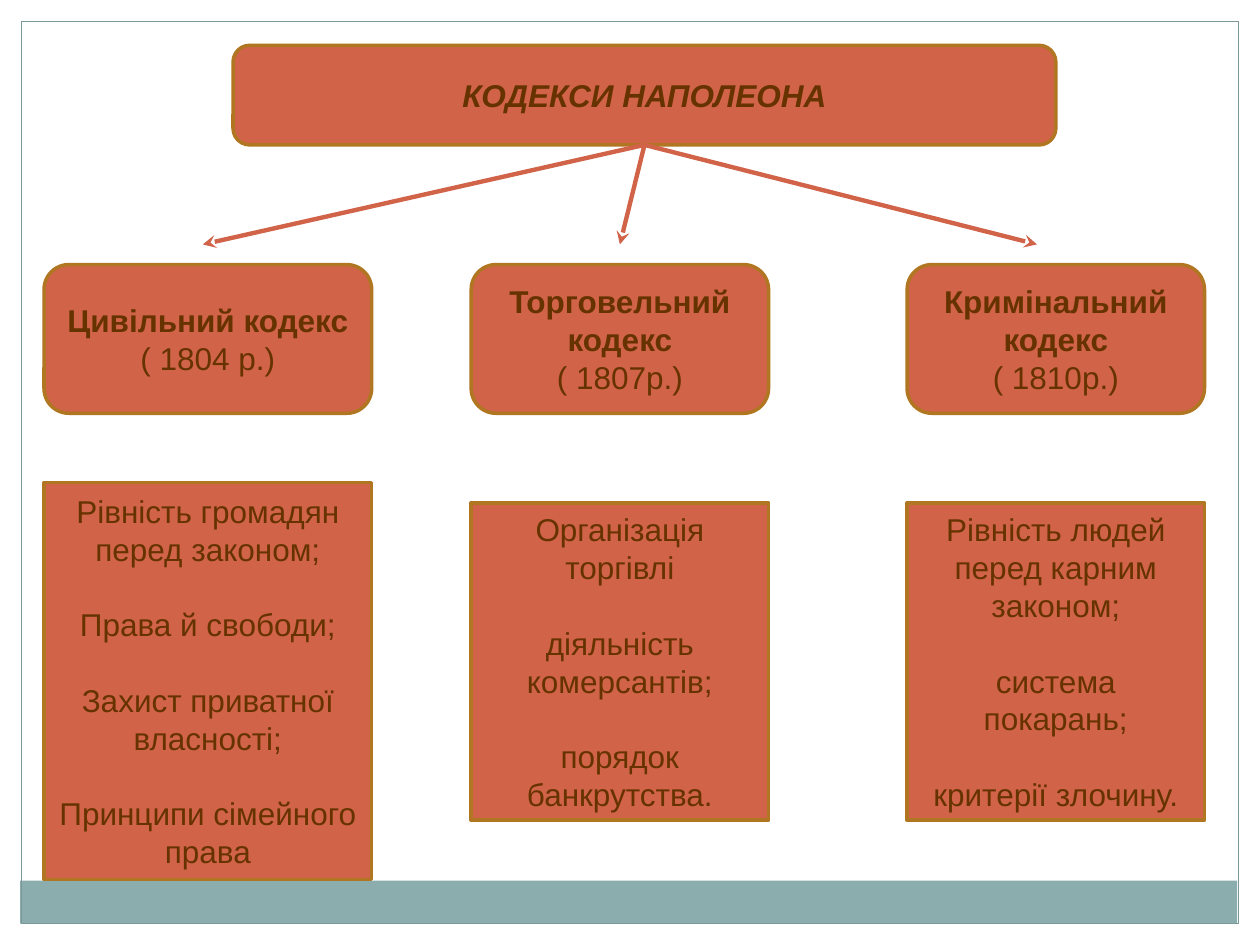
from dataclasses import dataclass

import pptx
import pptx.dml.color
import pptx.enum.shapes
import pptx.enum.text
import pptx.oxml.ns
import pptx.shapes.autoshape
import pptx.shapes.base
import pptx.slide
import pptx.util
from lxml import etree

Inches = pptx.util.Inches
Pt = pptx.util.Pt
Shapes = pptx.enum.shapes.MSO_SHAPE


@dataclass(frozen=True)
class Theme:
    font: str = "Arial"
    size: float = 18
    line_pitch: float = 21.6
    ink: str = "663300"
    box: str = "D16349"
    outline: str = "B07621"
    band: str = "8CADAE"
    frame: str = "7C999A"


@dataclass(frozen=True)
class Area:
    left: float
    top: float
    width: float
    height: float

    def lengths(self) -> tuple:
        return tuple(map(Inches, (self.left, self.top, self.width, self.height)))


@dataclass(frozen=True)
class Code:
    """One code: its name box, its contents box and the arrow leading to it."""
    name: str
    year: str
    topics: tuple[tuple[str, ...], ...]  # lines of one topic stay together
    left: float
    width: float
    topics_top: float
    topics_height: float
    arrow_x: float


THEME = Theme()
TITLE_AREA = Area(1.85, 0.36, 6.53, 0.79)
NAME_TOP, NAME_HEIGHT = 2.1, 1.18
ARROW_END_Y = 1.94

CODES = (
    Code("Цивільний кодекс", "( 1804 р.)",
         (("Рівність громадян перед законом;",), ("Права й свободи;",),
          ("Захист приватної власності;",), ("Принципи сімейного права",)),
         0.35, 2.6, 3.83, 3.15, 1.61),
    Code("Торговельний кодекс", "( 1807р.)",
         (("Організація торгівлі",), ("діяльність", "комерсантів;"),
          ("порядок банкрутства.",)),
         3.74, 2.36, 3.99, 2.52, 4.92),
    Code("Кримінальний кодекс", "( 1810р.)",
         (("Рівність людей перед карним законом;",), ("система покарань;",),
          ("критерії злочину.",)),
         7.2, 2.36, 3.99, 2.52, 8.23),
)


def rgb(value: str) -> pptx.dml.color.RGBColor:
    return pptx.dml.color.RGBColor.from_string(value)


def add_area(slide: pptx.slide.Slide, kind: Shapes, area: Area, fill: str | None,
             outline: str | None, weight: float = 2) -> pptx.shapes.autoshape.Shape:
    shape = slide.shapes.add_shape(kind, *area.lengths())
    shape.shadow.inherit = False
    if fill:
        shape.fill.solid()
        shape.fill.fore_color.rgb = rgb(fill)
    else:
        shape.fill.background()
    if outline:
        shape.line.color.rgb = rgb(outline)
        shape.line.width = Pt(weight)
    else:
        shape.line.fill.background()
    return shape


def add_box(slide: pptx.slide.Slide, kind: Shapes,
            area: Area) -> pptx.shapes.autoshape.Shape:
    return add_area(slide, kind, area, THEME.box, THEME.outline)


def write(shape: pptx.shapes.base.BaseShape, lines: list[str],
          bold_lines: int = 0, italic: bool = False) -> None:
    frame = shape.text_frame
    frame.text = "\n".join(lines)
    frame.word_wrap = True
    frame.auto_size = pptx.enum.text.MSO_AUTO_SIZE.NONE
    frame.vertical_anchor = pptx.enum.text.MSO_ANCHOR.MIDDLE
    for index, paragraph in enumerate(frame.paragraphs):
        paragraph.alignment = pptx.enum.text.PP_ALIGN.CENTER
        paragraph.line_spacing = Pt(THEME.line_pitch)
        for run in paragraph.runs:
            run.font.name = THEME.font
            run.font.size = Pt(THEME.size)
            run.font.color.rgb = rgb(THEME.ink)
            run.font.bold = index < bold_lines
            run.font.italic = italic


def add_title(slide: pptx.slide.Slide) -> pptx.shapes.autoshape.Shape:
    banner = add_box(slide, Shapes.ROUNDED_RECTANGLE, TITLE_AREA)
    title = slide.shapes.title
    title.left, title.top, title.width, title.height = TITLE_AREA.lengths()
    write(title, ["КОДЕКСИ НАПОЛЕОНА"], bold_lines=1, italic=True)
    banner.element.addnext(title.element)  # title text lies above its banner
    return banner


def add_arrow(slide: pptx.slide.Slide, banner: pptx.shapes.autoshape.Shape,
              end_x: float) -> None:
    start = (banner.left + banner.width // 2, banner.top + banner.height)
    arrow = slide.shapes.add_connector(pptx.enum.shapes.MSO_CONNECTOR.STRAIGHT,
                                       *start, Inches(end_x), Inches(ARROW_END_Y))
    arrow.begin_connect(banner, 2)
    arrow.line.color.rgb = rgb(THEME.box)
    arrow.line.width = Pt(2.5)
    qn = pptx.oxml.ns.qn
    etree.SubElement(arrow.line._get_or_add_ln(), qn("a:tailEnd"), type="stealth")
    etree.SubElement(arrow.element.spPr, qn("a:effectLst"))


def add_code(slide: pptx.slide.Slide, code: Code) -> None:
    name_box = add_box(slide, Shapes.ROUNDED_RECTANGLE,
                       Area(code.left, NAME_TOP, code.width, NAME_HEIGHT))
    write(name_box, [code.name, code.year], bold_lines=1)

    topics_box = add_box(slide, Shapes.RECTANGLE,
                         Area(code.left, code.topics_top, code.width, code.topics_height))
    write(topics_box, [line for topic in code.topics for line in topic])
    # A gap of one line before every topic but the first
    paragraphs = topics_box.text_frame.paragraphs
    first_line = 0
    for topic in code.topics[:-1]:
        first_line += len(topic)
        paragraphs[first_line].space_before = Pt(THEME.line_pitch)


def main() -> None:
    presentation = pptx.Presentation()
    presentation.slide_width = Inches(10)
    presentation.slide_height = Inches(7.5)
    slide = presentation.slides.add_slide(presentation.slide_layouts.get_by_name("Title Only"))

    # Bottom band and page frame
    add_area(slide, Shapes.RECTANGLE, Area(0.16, 6.99, 9.66, 0.34), THEME.band, None)
    add_area(slide, Shapes.RECTANGLE, Area(0.17, 0.17, 9.66, 7.16), None, THEME.frame, 0.75)

    # Heading, arrows and the three codes
    banner = add_title(slide)
    for code in CODES:
        add_arrow(slide, banner, code.arrow_x)
        add_code(slide, code)

    presentation.save("out.pptx")


if __name__ == "__main__":
    main()
